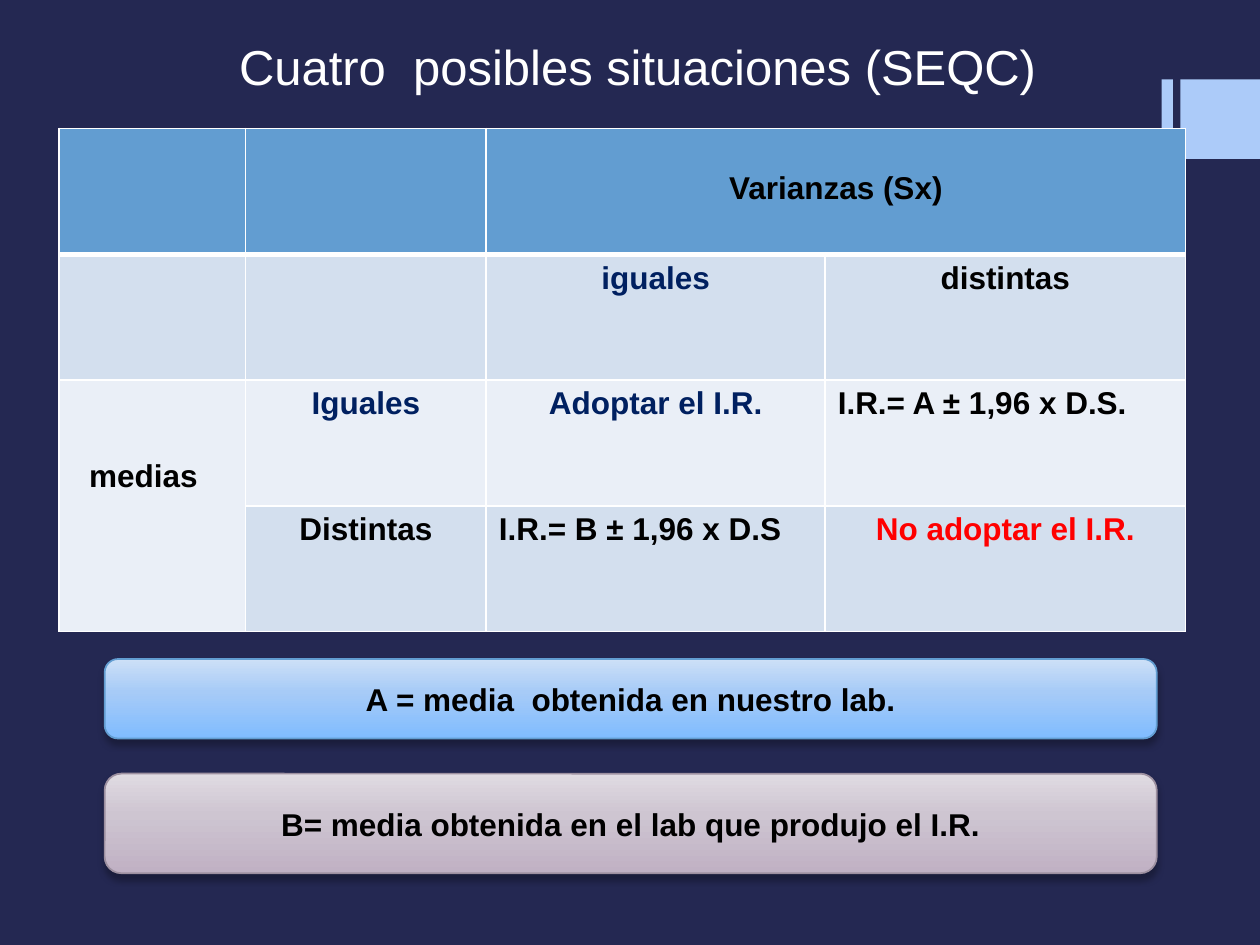
"""Build the slide on the four possible situations of means and variances."""
from copy import deepcopy

from lxml.etree import SubElement
from pptx import Presentation
from pptx.dml.color import RGBColor
from pptx.enum.shapes import MSO_SHAPE
from pptx.enum.text import MSO_ANCHOR, PP_ALIGN
from pptx.oxml.ns import qn
from pptx.util import Pt

THEME = {
    "font": "Arial", "title": 28, "body": 18,
    "back": "242852", "accent": "ACCBF9", "white": "FFFFFF", "black": "000000",
    "navy": "002060", "red": "FF0000",
    "head": "629DD1", "dark": "D3DFEE", "light": "EAEFF7",
}
TITLE = "Cuatro  posibles situaciones (SEQC)"
TITLE_BOX = (76.3, 9.4, 576, 56.9)
BARS = [(663.8, 45.4, 6.5, 45.4), (674.6, 45.4, 45.4, 45.4)]
ORIGIN = (33.8, 73.4)
COLS = [106.6, 137.5, 193.7, 205.9]
ROW = 71.9
FILLS = [
    ["head"] * 4,
    ["dark"] * 4,
    ["light"] * 4,
    ["light"] + ["dark"] * 3,
]
MERGES = [((0, 2), (0, 3)), ((2, 0), (3, 0))]
MID, LEFT = PP_ALIGN.CENTER, PP_ALIGN.LEFT
CELLS = [
    (0, 2, "Varianzas (Sx)", "black", MID),
    (1, 2, "iguales", "navy", MID),
    (1, 3, "distintas", "black", MID),
    (2, 0, "medias", "black", LEFT),
    (2, 1, "Iguales", "navy", MID),
    (2, 2, "Adoptar el I.R.", "navy", MID),
    (2, 3, "I.R.= A ± 1,96 x D.S.", "black", LEFT),
    (3, 1, "Distintas", "black", MID),
    (3, 2, "I.R.= B ± 1,96 x D.S", "black", LEFT),
    (3, 3, "No adoptar el I.R.", "red", MID),
]
INSETS = {(0, 2): (7.2, 24.3), (2, 0): (17.2, 45)}
NOTES = [
    ("A = media  obtenida en nuestro lab.", 376.6, 45.4,
     ("CDE0F7", "A7CBF7", "80BCFF"), "629DD1"),
    ("B= media obtenida en el lab que produjo el I.R.", 442.1, 56.9,
     ("E0DBE2", "CEC5D1", "C0B1C4"), "9D90A0"),
]
NOTE_X, NOTE_W = 59.8, 601.2
STOPS = (0, 0.41, 1)


def tint(name):
    return RGBColor.from_string(THEME.get(name, name))


def write(frame, text, color, size, align=MID, bold=True):
    para = frame.paragraphs[0]
    para.text = text
    para.alignment = align
    font = para.font
    font.name, font.size, font.bold = THEME["font"], Pt(THEME[size]), bold
    font.color.rgb = tint(color)


def edge(cell, row):
    props = cell._tc.get_or_add_tcPr()
    wide = {"T": 3 if row == 1 else 1, "B": 3 if row == 0 else 1}
    for side in "LRTB":
        line = SubElement(props, qn(f"a:ln{side}"), w=str(Pt(wide.get(side, 1))))
        fill = SubElement(line, qn("a:solidFill"))
        SubElement(fill, qn("a:srgbClr"), val=THEME["white"])


def add_bars(slide):
    for box in BARS:
        bar = slide.shapes.add_shape(MSO_SHAPE.RECTANGLE, *map(Pt, box))
        bar.shadow.inherit = False
        bar.fill.solid()
        bar.fill.fore_color.rgb = tint("accent")
        bar.line.fill.background()


def add_title(slide):
    frame = slide.shapes.add_textbox(*map(Pt, TITLE_BOX)).text_frame
    frame.word_wrap = True
    frame.vertical_anchor = MSO_ANCHOR.MIDDLE
    write(frame, TITLE, "white", "title", bold=False)


def add_grid(slide):
    size = (sum(COLS), ROW * len(FILLS))
    table = slide.shapes.add_table(
        len(FILLS), len(COLS), *map(Pt, ORIGIN + size)).table
    for col, width in zip(table.columns, COLS):
        col.width = Pt(width)
    for row, names in enumerate(FILLS):
        table.rows[row].height = Pt(ROW)
        for col, name in enumerate(names):
            cell = table.cell(row, col)
            edge(cell, row)
            cell.fill.solid()
            cell.fill.fore_color.rgb = tint(name)
    for first, last in MERGES:
        table.cell(*first).merge(table.cell(*last))
    for row, col, text, color, align in CELLS:
        cell = table.cell(row, col)
        write(cell.text_frame, text, color, "body", align)
        left, top = INSETS.get((row, col), (7.2, 3.6))
        cell.margin_left, cell.margin_top = Pt(left), Pt(top)


def shade(shape, colors):
    shape.fill.gradient()
    shape.fill.gradient_angle = 270
    stops = shape._element.spPr.find(".//" + qn("a:gsLst"))
    stops.insert(1, deepcopy(stops[0]))
    for stop, place, color in zip(shape.fill.gradient_stops, STOPS, colors):
        stop.position = place
        stop.color.rgb = tint(color)


def drop(shape):
    shape.shadow.inherit = False
    effects = shape._element.spPr.find(qn("a:effectLst"))
    cast = SubElement(effects, qn("a:outerShdw"), blurRad=str(Pt(4)),
                      dist=str(Pt(3)), dir="5400000", rotWithShape="0")
    color = SubElement(cast, qn("a:srgbClr"), val=THEME["black"])
    SubElement(color, qn("a:alpha"), val="28000")


def add_notes(slide):
    for text, top, high, colors, rim in NOTES:
        note = slide.shapes.add_shape(
            MSO_SHAPE.ROUNDED_RECTANGLE, *map(Pt, (NOTE_X, top, NOTE_W, high)))
        shade(note, colors)
        note.line.color.rgb = tint(rim)
        note.line.width = Pt(1)
        drop(note)
        note.text_frame.word_wrap = True
        note.text_frame.vertical_anchor = MSO_ANCHOR.MIDDLE
        write(note.text_frame, text, "black", "body")


def main():
    deck = Presentation()
    deck.slide_width, deck.slide_height = Pt(720), Pt(540)
    slide = deck.slides.add_slide(deck.slide_layouts[6])
    slide.background.fill.solid()
    slide.background.fill.fore_color.rgb = tint("back")
    for build in (add_bars, add_title, add_grid, add_notes):
        build(slide)
    deck.save("out.pptx")


if __name__ == "__main__":
    main()
